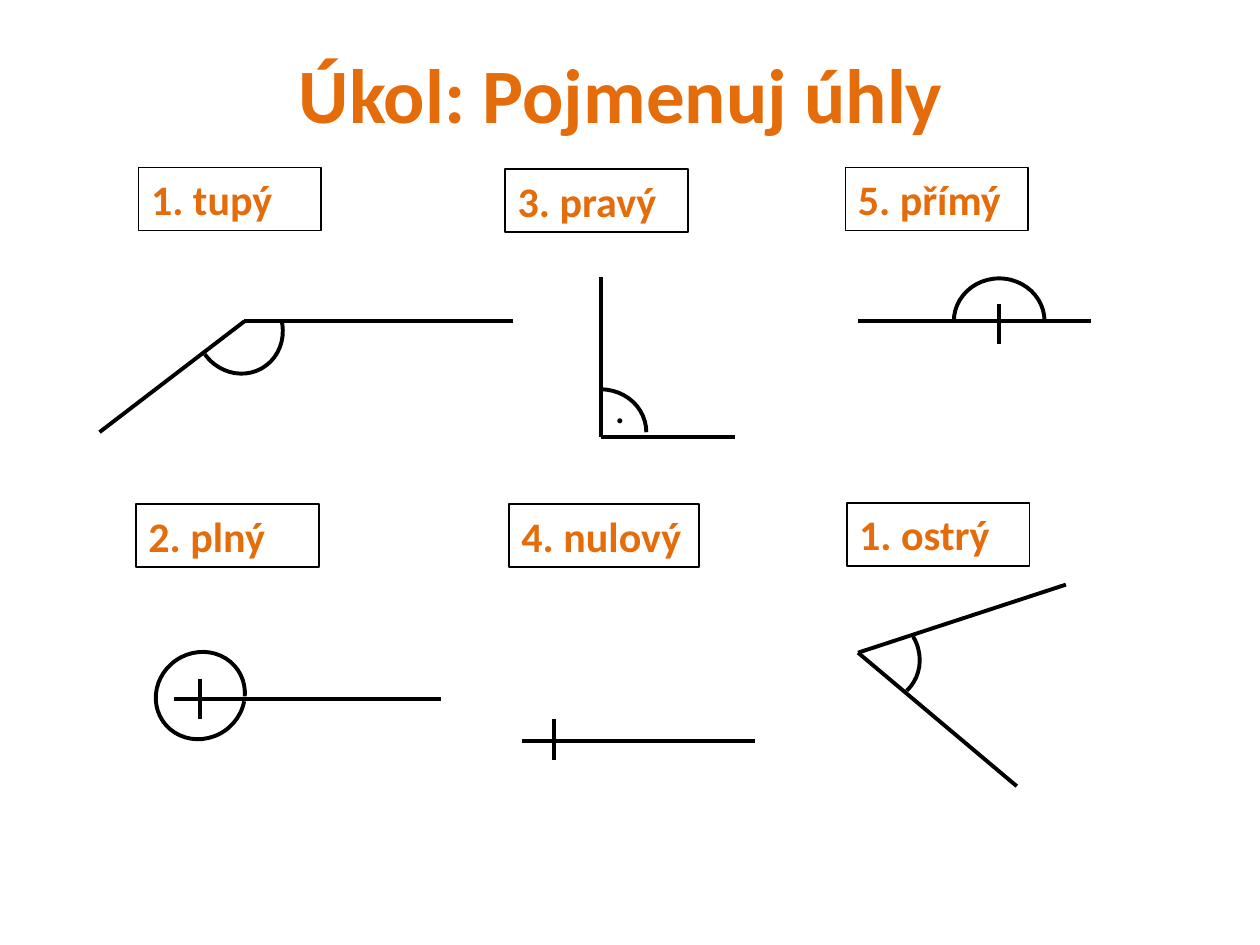
from pptx import Presentation
from pptx.dml.color import RGBColor
from pptx.enum.shapes import MSO_CONNECTOR, MSO_SHAPE
from pptx.enum.text import MSO_ANCHOR, PP_ALIGN
from pptx.oxml.ns import qn
from pptx.util import Inches, Pt
from lxml.etree import SubElement

COLORS = {"accent": "E46C0A", "ink": "000000"}
FONT = "Calibri"
ADJUSTMENT_PER_DEGREE = 0.6
ARC_WIDTH, ARC_HEIGHT = 0.72, 0.68

LABELS = [
    ("1. tupý", 1.1, 1.33, 1.45),
    ("3. pravý", 4.01, 1.34, 1.45),
    ("5. přímý", 6.71, 1.33, 1.45),
    ("2. plný", 1.08, 4, 1.45),
    ("4. nulový", 4.04, 4, 1.51),
    ("1. ostrý", 6.72, 3.99, 1.45),
]
ARMS = [
    (1.94, 2.55, 4.07, 2.55),
    (1.94, 2.55, 0.79, 3.43),
    (4.77, 3.47, 5.83, 3.47),
    (4.77, 2.2, 4.77, 3.47),
    (6.81, 2.55, 8.66, 2.55),
    (1.38, 5.55, 3.5, 5.55),
    (4.14, 5.88, 5.99, 5.88),
    (6.81, 5.18, 8.46, 4.64),
    (6.81, 5.18, 8.07, 6.24),
]
VERTEX_TICKS = [(7.93, 2.57), (1.59, 5.55), (4.4, 5.87)]
TICK_LENGTH = 0.32
ARCS = [
    (4.41, 3.09, 0, 270, 0),
    (1.54, 2.27, 240.1, 107.9, 263.66),
    (7.57, 2.21, 0, 179.28, 0),
    (1.23, 5.18, 325.7, 41.7, 35.36),
    (6.59, 4.88, 46.8, 283.92, 0),
]


def color(name):
    """Return the named colour."""
    return RGBColor.from_string(COLORS[name])


def style_line(line, width):
    """Give a line the ink colour and a width in points."""
    line.color.rgb = color("ink")
    line.width = Pt(width)


def add_text(page, text, left, top, width, height, size, tint, bold=True):
    """Add a text box with one formatted paragraph."""
    box = page.shapes.add_textbox(Inches(left), Inches(top), Inches(width), Inches(height))
    frame = box.text_frame
    frame.word_wrap = True
    frame.text = text
    font = frame.paragraphs[0].runs[0].font
    font.name, font.size, font.bold = FONT, Pt(size), bold
    font.color.rgb = color(tint)
    return box


def add_title(page, text):
    """Add the centred slide heading."""
    frame = add_text(page, text, 0.5, 0.3, 9, 0.87, 44, "accent").text_frame
    frame.vertical_anchor = MSO_ANCHOR.MIDDLE
    frame.paragraphs[0].alignment = PP_ALIGN.CENTER


def add_label(page, text, left, top, width):
    """Add a framed angle name."""
    box = add_text(page, text, left, top, width, 0.5, 24, "accent")
    style_line(box.line, 1)


def add_segment(page, x1, y1, x2, y2):
    """Add a straight line between two points."""
    segment = page.shapes.add_connector(
        MSO_CONNECTOR.STRAIGHT, Inches(x1), Inches(y1), Inches(x2), Inches(y2))
    style_line(segment.line, 2.25)
    SubElement(segment._element.spPr, qn("a:effectLst"))


def add_arc(page, left, top, rotation, start, end):
    """Add an angle arc running clockwise between two angles in degrees."""
    arc = page.shapes.add_shape(
        MSO_SHAPE.ARC, Inches(left), Inches(top), Inches(ARC_WIDTH), Inches(ARC_HEIGHT))
    arc.adjustments[0] = start * ADJUSTMENT_PER_DEGREE
    arc.adjustments[1] = end * ADJUSTMENT_PER_DEGREE
    arc.rotation = rotation
    arc.shadow.inherit = False
    arc.fill.background()
    style_line(arc.line, 2.25)


def add_right_angle_dot(page):
    """Add the dot that marks the right angle."""
    frame = add_text(page, ".", 4.78, 2.98, 0.58, 0.99, 24, "ink", False).text_frame
    frame.word_wrap = False


def main():
    """Build the slide and save it."""
    deck = Presentation()
    deck.slide_width, deck.slide_height = Inches(10), Inches(7.5)
    page = deck.slides.add_slide(deck.slide_layouts[6])
    add_title(page, "Úkol: Pojmenuj úhly ")
    for arm in ARMS:
        add_segment(page, *arm)
    for x, y in VERTEX_TICKS:
        add_segment(page, x, y - TICK_LENGTH / 2, x, y + TICK_LENGTH / 2)
    add_right_angle_dot(page)
    for arc in ARCS:
        add_arc(page, *arc)
    for label in LABELS:
        add_label(page, *label)
    deck.save("out.pptx")


if __name__ == "__main__":
    main()
